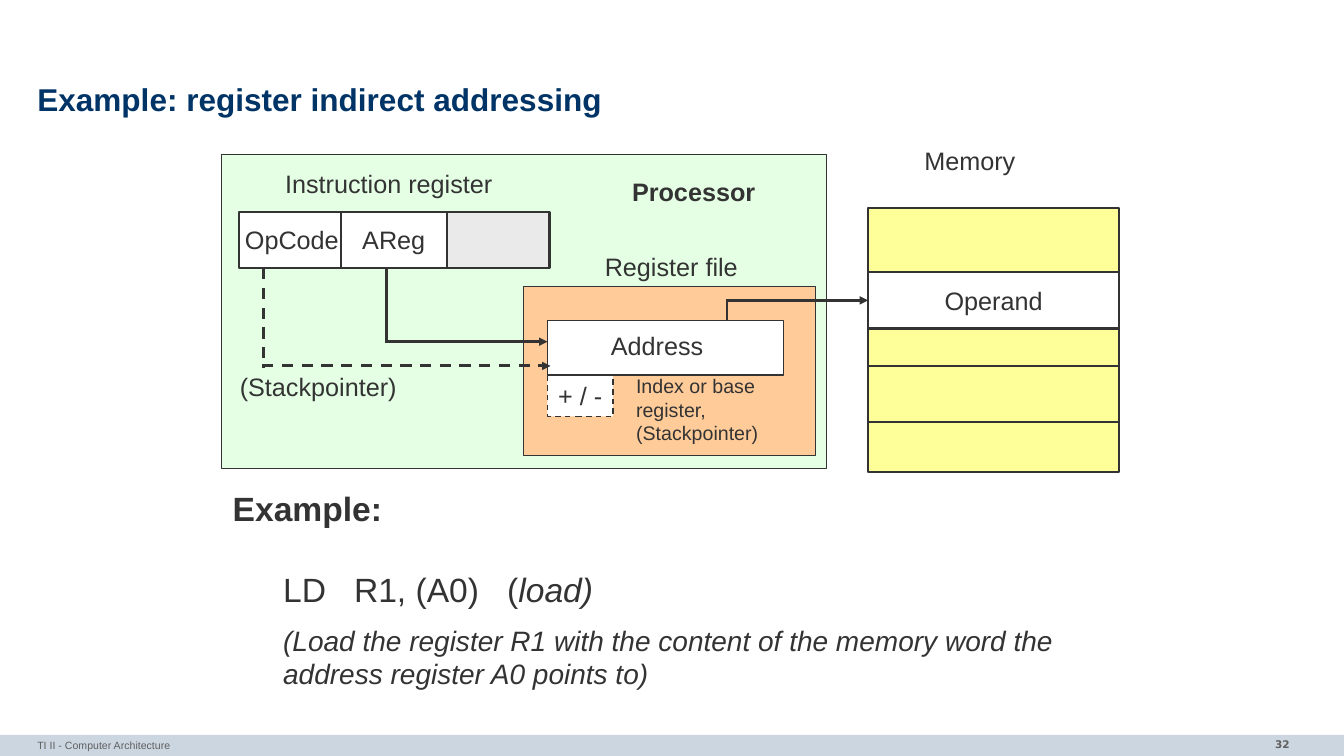
from lxml.etree import SubElement
from pptx import Presentation
from pptx.dml.color import RGBColor
from pptx.enum.dml import MSO_LINE as Dash
from pptx.enum.shapes import MSO_CONNECTOR as Link, MSO_SHAPE as Form
from pptx.enum.text import MSO_ANCHOR as Anchor, PP_ALIGN as Align
from pptx.oxml.ns import qn
from pptx.util import Inches, Pt

INK = RGBColor(0x33, 0x33, 0x33)
NAVY = RGBColor(0x00, 0x33, 0x66)
GRAY = RGBColor(0x5F, 0x5F, 0x5F)
BAR = RGBColor(0xCC, 0xD6, 0xE0)
GREEN = RGBColor(0xCC, 0xFF, 0xCC)
ORANGE = RGBColor(0xFF, 0xCC, 0x99)
YELLOW = RGBColor(0xFF, 0xFF, 0x99)
PALE = RGBColor(0xEA, 0xEA, 0xEA)
WHITE = RGBColor(0xFF, 0xFF, 0xFF)


class Painter:
    def __init__(self, slide, face="Arial"):
        self.shapes = slide.shapes
        self.face = face

    def style(self, para, size, color=INK, bold=False, face=None):
        for run in para.runs:
            font = run.font
            font.name = face or self.face
            font.size = Pt(size)
            font.bold = bold
            font.color.rgb = color

    def text(self, words, left, top, width, height, size=18, color=INK,
             bold=False, face=None):
        box = self.shapes.add_textbox(Inches(left), Inches(top),
                                      Inches(width), Inches(height))
        frame = box.text_frame
        frame.word_wrap = True
        frame.text = words
        for para in frame.paragraphs:
            self.style(para, size, color, bold, face)
        return frame

    def box(self, left, top, width, height, fill, words="", line=1.5,
            dash=None, alpha=None):
        """Draw a rectangle; line 0 means no outline, alpha is in percent."""
        shape = self.shapes.add_shape(Form.RECTANGLE, Inches(left), Inches(top),
                                      Inches(width), Inches(height))
        shape.shadow.inherit = False
        shape.fill.solid()
        shape.fill.fore_color.rgb = fill
        if alpha:
            tone = shape.fill._xPr.find(".//" + qn("a:srgbClr"))
            SubElement(tone, qn("a:alpha")).set("val", str(alpha * 1000))
        if line:
            shape.line.color.rgb = INK
            shape.line.width = Pt(line)
            if dash:
                shape.line.dash_style = dash
        else:
            shape.line.fill.background()
        if words:
            frame = shape.text_frame
            frame.word_wrap = False
            frame.vertical_anchor = Anchor.MIDDLE
            frame.text = words
            para = frame.paragraphs[0]
            para.alignment = Align.CENTER
            self.style(para, 18)
        return shape

    def line(self, start, end, arrow=False, dash=None):
        link = self.shapes.add_connector(
            Link.STRAIGHT, *(Inches(v) for v in (*start, *end)))
        link.line.color.rgb = INK
        link.line.width = Pt(2)
        if dash:
            link.line.dash_style = dash
        props = link._element.spPr
        if arrow:
            SubElement(props.find(qn("a:ln")), qn("a:tailEnd")).set("type", "triangle")
        SubElement(props, qn("a:effectLst"))
        return link


def frame_page(pen):
    """Title, footer bar and page number."""
    pen.box(0, 7.29, 13.33, 0.21, BAR, line=0)
    number = pen.text("32", 11.1, 7.27, 1.79, 0.26, 7.5, GRAY, True, "DejaVu Sans")
    number.paragraphs[0].alignment = Align.RIGHT
    title = pen.text("Example: register indirect addressing",
                     0.37, 0.78, 12.6, 0.47, 22.5, NAVY, True)
    title.margin_top = title.margin_bottom = 0
    title.vertical_anchor = Anchor.MIDDLE
    title.paragraphs[0].line_spacing = 0.85
    footer = pen.text("TI II - Computer Architecture",
                      0.37, 7.28, 8.72, 0.25, 7.5, GRAY)
    for frame in (title, footer):
        frame.margin_left = frame.margin_right = 0


def draw_chip(pen):
    """Processor with its instruction register and register file."""
    pen.box(2.2, 1.53, 6, 3.12, GREEN, line=1, alpha=50)
    pen.box(5.19, 2.84, 2.9, 1.68, ORANGE, line=1)
    pen.text("Instruction register", 2.73, 1.62, 2.57, 0.4)
    pen.text("Processor", 6.17, 1.7, 1.45, 0.4, bold=True)
    pen.text("Register file", 5.9, 2.44, 1.62, 0.4)
    for left, fill, words in ((2.37, WHITE, "OpCode"), (4.4, PALE, ""),
                              (3.38, WHITE, "AReg")):
        pen.box(left, 2.1, 1.05, 0.56, fill, words)
    pen.box(5.43, 3.71, 0.65, 0.42, WHITE, "+ / -", 1, Dash.DASH)
    pen.text("Index or base register,\v(Stackpointer)", 6.21, 3.66, 1.89, 0.81, 14)
    pen.box(5.43, 3.18, 2.34, 0.54, WHITE, line=1)
    pen.text("Address", 5.96, 3.23, 1.33, 0.4)
    pen.text("(Stackpointer)", 2.28, 3.63, 1.82, 0.4)


def draw_store(pen):
    """Memory column; returns the operand cell."""
    pen.text("Memory", 9.07, 1.39, 1.6, 0.4)
    for top, height in ((2.06, 2.62), (3.08, 0.56), (3.63, 0.56)):
        pen.box(8.61, top, 2.49, height, YELLOW)
    return pen.box(8.61, 2.7, 2.49, 0.56, WHITE, "Operand")


def draw_paths(pen, operand):
    pen.line((7.21, 2.97), (7.21, 3.18))
    fetch = pen.line((7.2, 2.98), (8.61, 2.98), arrow=True)
    fetch.end_connect(operand, 1)
    for left, top, right, low, dash in ((3.83, 2.67, 5.43, 3.39, None),
                                        (2.61, 2.66, 5.46, 3.63, Dash.DASH)):
        pen.line((left, top), (left, low + 0.01), dash=dash)
        pen.line((left - 0.01, low), (right, low), True, dash)


def write_code(pen):
    """Worked example below the diagram."""
    frame = pen.text("Example:", 2.21, 4.79, 9.03, 2.14, 24, bold=True)
    note = ("(Load the register R1 with the content of the memory word "
            "the address register A0 points to)")
    for parts, size, gap in ((("LD   R1, (A0)   (", "load)"), 24, 29),
                             ((note,), 20, 10)):
        para = frame.add_paragraph()
        para.level = 1
        para._p.get_or_add_pPr().set("marL", str(Inches(0.5)))
        para.space_before = Pt(gap)
        for part in parts:
            para.add_run().text = part
        pen.style(para, size)
        para.runs[-1].font.italic = True


def main():
    deck = Presentation()
    deck.slide_width = Inches(13.33)
    deck.slide_height = Inches(7.5)
    pen = Painter(deck.slides.add_slide(deck.slide_layouts[6]))
    frame_page(pen)
    draw_chip(pen)
    draw_paths(pen, draw_store(pen))
    write_code(pen)
    deck.save("out.pptx")


if __name__ == "__main__":
    main()
